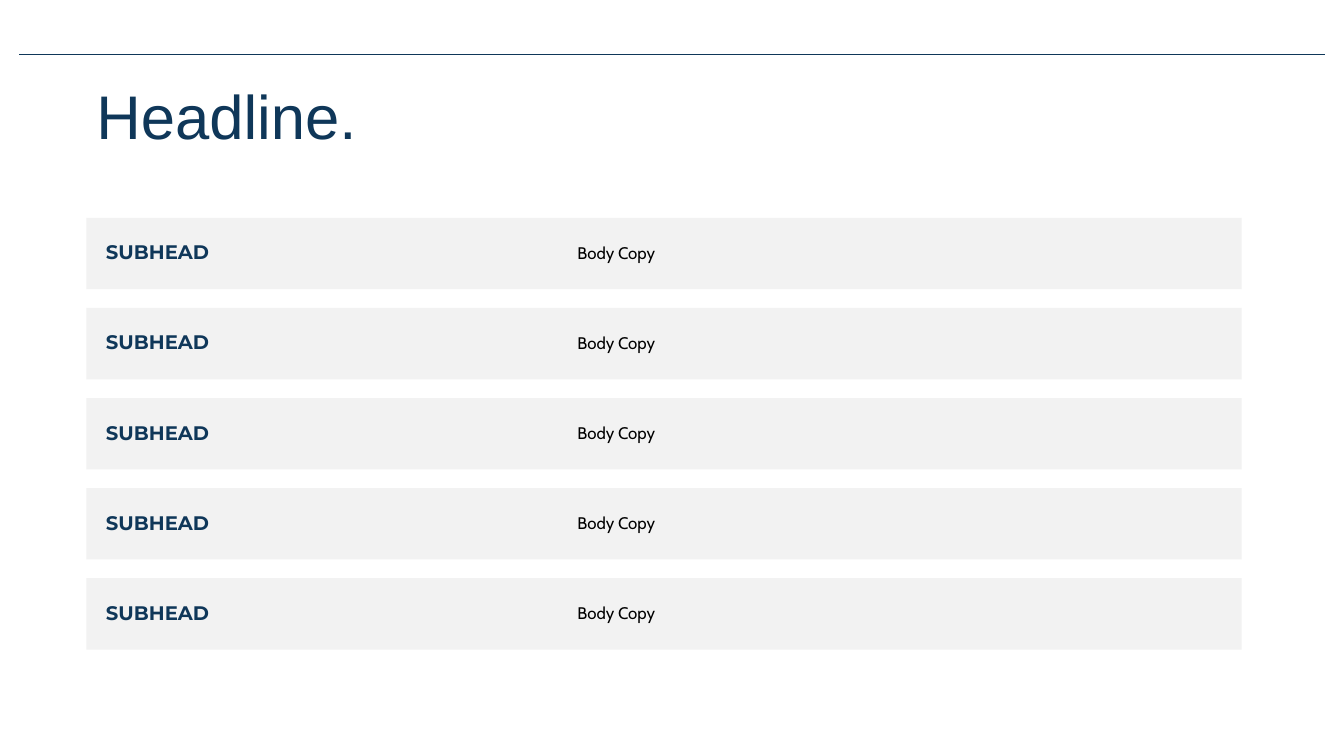
from lxml import etree
from pptx import Presentation
from pptx.dml.color import RGBColor
from pptx.enum.shapes import MSO_CONNECTOR, MSO_SHAPE
from pptx.enum.text import MSO_ANCHOR
from pptx.oxml.ns import qn
from pptx.util import Cm, Pt

NAVY = RGBColor(0x0F, 0x37, 0x59)
GRAY = RGBColor(0xF2, 0xF2, 0xF2)
BLACK = RGBColor(0, 0, 0)


class Deck:
    """Holds the style and the current slide."""

    head = ("Arial", 44, NAVY, False)
    subhead = ("Montserrat", 14, NAVY, True)
    body = ("Cabin", 12, BLACK, False)

    def __init__(self):
        self.show = Presentation()
        self.show.slide_width = Cm(33.87)
        self.show.slide_height = Cm(19.05)
        self.slide = self.show.slides.add_slide(self.show.slide_layouts[6])

    def rule(self, left, right, top):
        line = self.slide.shapes.add_connector(
            MSO_CONNECTOR.STRAIGHT, Cm(left), Cm(top), Cm(right), Cm(top))
        line.line.color.rgb = NAVY
        line.line.width = Pt(0.5)
        etree.SubElement(line.element.spPr, qn("a:effectLst"))

    def band(self, left, top, width, height):
        bar = self.slide.shapes.add_shape(
            MSO_SHAPE.RECTANGLE, Cm(left), Cm(top), Cm(width), Cm(height))
        bar.shadow.inherit = False
        bar.fill.solid()
        bar.fill.fore_color.rgb = GRAY
        bar.line.fill.background()

    def text(self, words, style, left, top, width, height,
             anchor=MSO_ANCHOR.MIDDLE):
        box = self.slide.shapes.add_textbox(
            Cm(left), Cm(top), Cm(width), Cm(height))
        frame = box.text_frame
        frame.word_wrap = True
        frame.vertical_anchor = anchor
        para = frame.paragraphs[0]
        para.line_spacing = 0.9
        run = para.add_run()
        run.text = words
        font = run.font
        font.name, size, font.color.rgb, font.bold = style
        font.size = Pt(size)


def main():
    deck = Deck()

    # Top rule and headline
    deck.rule(0.48, 33.4, 1.37)
    deck.text("Headline.", deck.head, 2.18, 2.06, 20.32, 4.52, MSO_ANCHOR.TOP)

    # Five evenly spaced rows
    rows = [("SUBHEAD", "Body Copy")] * 5
    for i, (label, copy) in enumerate(rows):
        top = 5.49 + i * 2.27
        deck.band(2.18, top, 29.11, 1.8)
        deck.text(label, deck.subhead, 2.42, top + 0.24, 8.13, 1.32)
        deck.text(copy, deck.body, 14.3, top + 0.24, 16.74, 1.32)

    deck.show.save("out.pptx")


if __name__ == "__main__":
    main()
